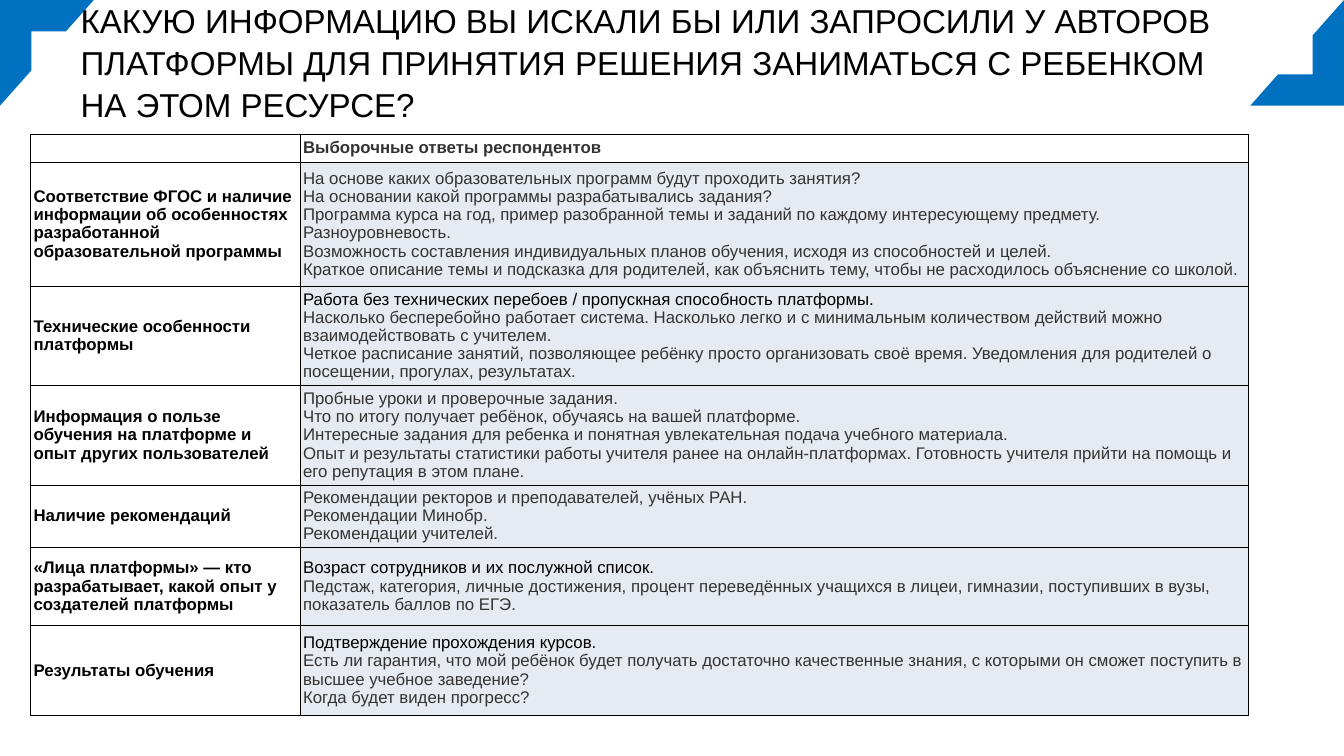
from pptx import Presentation
from pptx.dml.color import RGBColor
from pptx.enum.shapes import MSO_SHAPE
from pptx.enum.text import MSO_ANCHOR, MSO_AUTO_SIZE, PP_ALIGN
from pptx.oxml import parse_xml
from pptx.oxml.ns import nsdecls
from pptx.util import Pt

# Content
QUESTION = ("КАКУЮ ИНФОРМАЦИЮ ВЫ ИСКАЛИ БЫ ИЛИ ЗАПРОСИЛИ У АВТОРОВ ПЛАТФОРМЫ "
            "ДЛЯ ПРИНЯТИЯ РЕШЕНИЯ ЗАНИМАТЬСЯ С РЕБЕНКОМ НА ЭТОМ РЕСУРСЕ?")
HEADER = "Выборочные ответы респондентов"
# (topic, row height, black lead answer, grey answers)
TOPICS = [
    ("Соответствие ФГОС и наличие информации об особенностях разработанной "
     "образовательной программы", 177, None, [
         "На основе каких образовательных программ будут проходить занятия?",
         "На основании какой программы разрабатывались задания?",
         "Программа курса на год, пример разобранной темы и заданий по каждому "
         "интересующему предмету.",
         "Разноуровневость.",
         "Возможность составления индивидуальных планов обучения, исходя из "
         "способностей и целей.",
         "Краткое описание темы и подсказка для родителей, как объяснить тему, "
         "чтобы не расходилось объяснение со школой."]),
    ("Технические особенности платформы", 142,
     "Работа без технических перебоев / пропускная способность платформы.", [
         "Насколько бесперебойно работает система. Насколько легко и с минимальным "
         "количеством действий можно взаимодействовать с учителем.",
         "Четкое расписание занятий, позволяющее ребёнку просто организовать своё "
         "время. Уведомления для родителей о посещении, прогулах, результатах."]),
    ("Информация о пользе обучения на платформе и опыт других пользователей",
     142, None, [
         "Пробные уроки и проверочные задания.",
         "Что по итогу получает ребёнок, обучаясь на вашей платформе.",
         "Интересные задания для ребенка и понятная увлекательная подача учебного "
         "материала.",
         "Опыт и результаты статистики работы учителя ранее на онлайн-платформах. "
         "Готовность учителя прийти на помощь и его репутация в этом плане."]),
    ("Наличие рекомендаций", 89, None, [
        "Рекомендации ректоров и преподавателей, учёных РАН.",
        "Рекомендации Минобр.",
        "Рекомендации учителей."]),
    ("«Лица платформы» — кто разрабатывает, какой опыт у создателей платформы",
     112, "Возраст сотрудников и их послужной список.", [
         "Педстаж, категория, личные достижения, процент переведённых учащихся в "
         "лицеи, гимназии, поступивших в вузы, показатель баллов по ЕГЭ."]),
    ("Результаты обучения", 128, "Подтверждение прохождения курсов.", [
        "Есть ли гарантия, что мой ребёнок будет получать достаточно качественные "
        "знания, с которыми он сможет поступить в высшее учебное заведение?",
        "Когда будет виден прогресс?"]),
]

# Format
SLIDE_W, SLIDE_H = 1920, 1080
FRAME_W, FRAME_H = 134, 151
TABLE_LEFT, TABLE_TOP = 44, 192
COLUMNS = [385, 1354]
HEADER_H = 40
BLACK, GREY, BLUE, PALE = "000000", "333333", "0070C0", "E6EBF1"
INSETS = {f"margin_{side}": Pt(4) for side in ("left", "top", "right", "bottom")}
TITLE_FONT = {"name": "Arial", "size": Pt(47.3), "bold": False}
TOPIC_FONT = {"name": "Arial", "size": Pt(24), "bold": True}
ANSWER_FONT = {**TOPIC_FONT, "bold": False}
NO_GRID_STYLE = "{2D5ABB26-0587-4C30-8999-92F81FD0307C}"


def rgb(code):
    return RGBColor.from_string(code)


def apply(target, values):
    for key, value in values.items():
        setattr(target, key, value)


def write(frame, lines, font, spacing):
    """Write (text, colour) lines, one paragraph each."""
    for i, (text, color) in enumerate(lines):
        paragraph = frame.paragraphs[0] if i == 0 else frame.add_paragraph()
        apply(paragraph, {"alignment": PP_ALIGN.LEFT, "line_spacing": spacing,
                          "space_before": Pt(0), "space_after": Pt(0)})
        run = paragraph.add_run()
        run.text = text
        apply(run.font, font)
        run.font.color.rgb = rgb(color)


def fill_cell(cell, lines, font, background=None):
    apply(cell, {**INSETS, "vertical_anchor": MSO_ANCHOR.MIDDLE})
    properties = cell._tc.get_or_add_tcPr()
    for side in "LRTB":
        properties.append(parse_xml(
            f'<a:ln{side} {nsdecls("a")} w="12700"><a:solidFill>'
            f'<a:srgbClr val="{BLACK}"/></a:solidFill></a:ln{side}>'))
    if background:
        cell.fill.solid()
        cell.fill.fore_color.rgb = rgb(background)
    else:
        cell.fill.background()
    write(cell.text_frame, lines, font, 0.97)


prs = Presentation()
prs.slide_width, prs.slide_height = Pt(SLIDE_W), Pt(SLIDE_H)
slide = prs.slides.add_slide(prs.slide_layouts[5])

# Title
title = slide.shapes.title
apply(title, {"left": Pt(111), "top": Pt(21.6), "width": Pt(1654), "height": Pt(132.5)})
apply(title.text_frame, {**INSETS, "word_wrap": True, "auto_size": MSO_AUTO_SIZE.NONE,
                         "vertical_anchor": MSO_ANCHOR.MIDDLE})
write(title.text_frame, [(QUESTION, BLACK)], TITLE_FONT, 1.05)

# Corner frames, behind the title
for left, rotation in ((0, 0), (SLIDE_W - FRAME_W, 180)):
    corner = slide.shapes.add_shape(MSO_SHAPE.HALF_FRAME, Pt(left), Pt(0),
                                    Pt(FRAME_W), Pt(FRAME_H))
    corner.rotation = rotation
    corner.shadow.inherit = False
    corner.fill.solid()
    corner.fill.fore_color.rgb = rgb(BLUE)
    corner.line.fill.background()
    title.element.addprevious(corner.element)

# Table of answers
heights = [HEADER_H] + [height for _, height, _, _ in TOPICS]
answers_table = slide.shapes.add_table(
    len(heights), len(COLUMNS), Pt(TABLE_LEFT), Pt(TABLE_TOP),
    Pt(sum(COLUMNS)), Pt(sum(heights))).table
apply(answers_table, {"first_row": False, "horz_banding": False})
answers_table._tbl.tblPr.find("{*}tableStyleId").text = NO_GRID_STYLE
for column, width in zip(answers_table.columns, COLUMNS):
    column.width = Pt(width)
for row, height in zip(answers_table.rows, heights):
    row.height = Pt(height)

fill_cell(answers_table.cell(0, 0), [], TOPIC_FONT)
fill_cell(answers_table.cell(0, 1), [(HEADER, GREY)], TOPIC_FONT)
for r, (topic, _, lead, answers) in enumerate(TOPICS, start=1):
    lines = [(lead, BLACK)] if lead else []
    lines += [(answer, GREY) for answer in answers]
    fill_cell(answers_table.cell(r, 0), [(topic, BLACK)], TOPIC_FONT)
    fill_cell(answers_table.cell(r, 1), lines, ANSWER_FONT, PALE)

prs.save("out.pptx")
